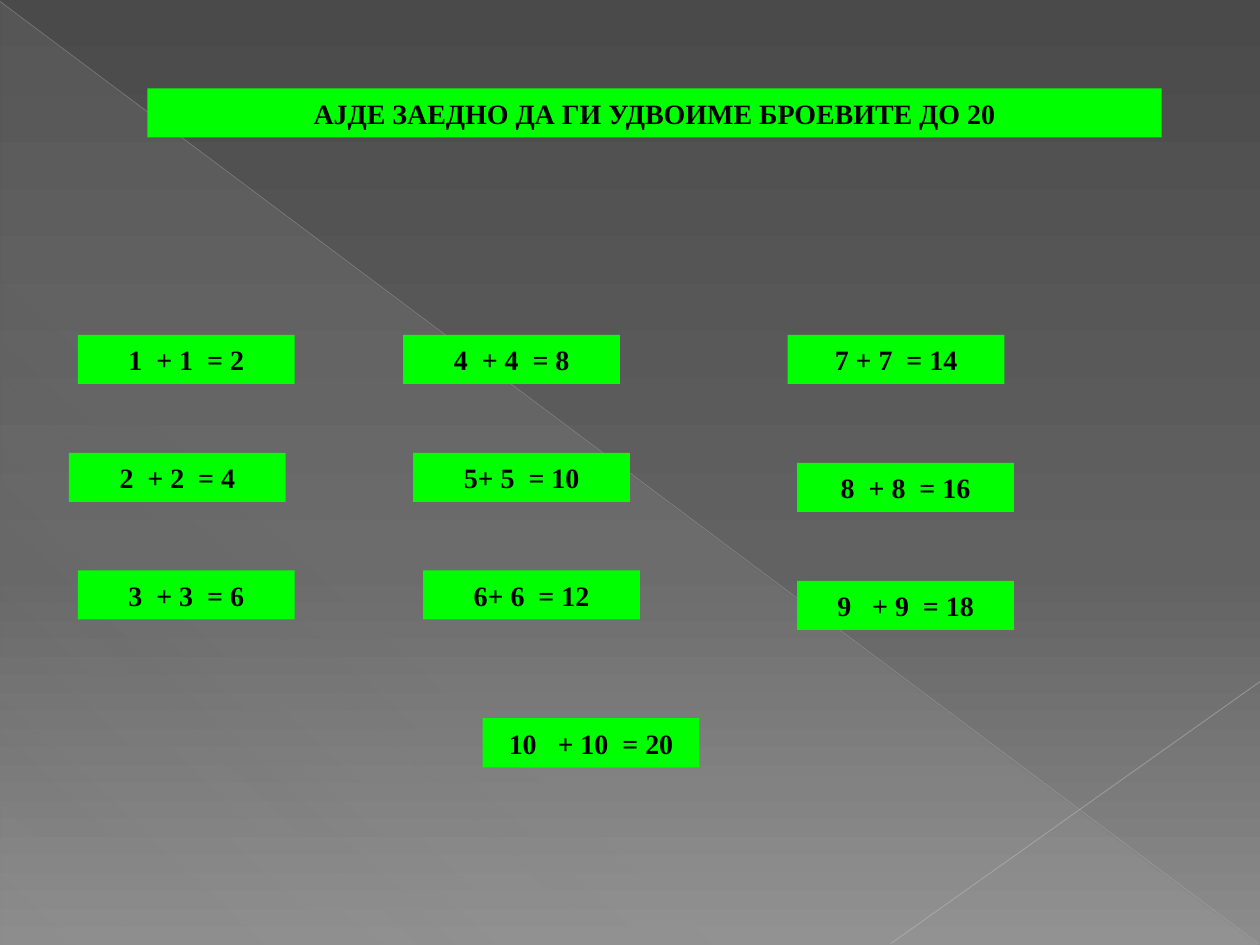
from dataclasses import dataclass

from lxml.etree import SubElement
from pptx import Presentation
from pptx.dml.color import RGBColor
from pptx.enum.shapes import MSO_CONNECTOR as CONN, MSO_SHAPE as SHAPE
from pptx.enum.text import MSO_ANCHOR as ANCHOR, PP_ALIGN as ALIGN
from pptx.oxml.ns import qn
from pptx.util import Cm, Pt

COLORS = {
    "box": "00FF00", "text": "000000", "veil": "D2D2D2",
    "diagonal": "BFBFBF", "corner": "C6C6C6",
    "bg_top": "4A4A4A", "bg_mid": "626262", "bg_bottom": "8C8C8C",
}
FONT = {"name": "Times New Roman", "size": Pt(16), "bold": True}
FRAME = {"word_wrap": True, "vertical_anchor": ANCHOR.MIDDLE,
         "margin_top": Cm(0.13), "margin_bottom": Cm(0.13)}
BOX_W, BOX_H = 4.37, 0.99


@dataclass
class Sum:
    text: str
    left: float
    top: float


@dataclass
class Line:
    start: tuple[float, float]
    end: tuple[float, float]
    color: str
    width: float
    opacity: int


SUMS = [
    Sum("1  + 1  = 2", 1.57, 6.75),
    Sum("2  + 2  = 4", 1.39, 9.13),
    Sum("3  + 3  = 6", 1.57, 11.5),
    Sum("4  + 4  = 8", 8.13, 6.75),
    Sum("5+ 5  = 10", 8.33, 9.13),
    Sum("6+ 6  = 12", 8.53, 11.5),
    Sum("7 + 7  = 14", 15.88, 6.75),
    Sum("8  + 8  = 16", 16.07, 9.33),
    Sum("9   + 9  = 18", 16.07, 11.71),
    Sum("10   + 10  = 20", 9.73, 14.48),
]
LINES = [
    Line((0, 0.03), (25.37, 19.02), "diagonal", 0.39, 35),
    Line((25.4, 13.74), (17.96, 19.02), "corner", 0.47, 45),
]


def rgb(name: str) -> RGBColor:
    return RGBColor.from_string(COLORS[name])


def add_alpha(color_element, percent: int) -> None:
    SubElement(color_element, qn("a:alpha"), val=str(percent * 1000))


def set_gradient(fill, owner, stops: list[tuple[int, str, int]], angle: int) -> None:
    """Each stop is (position %, colour name, opacity %)."""
    fill.gradient()
    grad = owner.find(".//" + qn("a:gradFill"))
    stop_list = grad.find(qn("a:gsLst"))
    for old in list(stop_list):
        stop_list.remove(old)
    for pos, name, opacity in stops:
        gs = SubElement(stop_list, qn("a:gs"), pos=str(pos * 1000))
        color = SubElement(gs, qn("a:srgbClr"), val=COLORS[name])
        if opacity < 100:
            add_alpha(color, opacity)
    grad.find(qn("a:lin")).set("ang", str(angle * 60000))


def draw_line(s, line: Line) -> None:
    cx = s.shapes.add_connector(CONN.STRAIGHT, *map(Cm, line.start + line.end))
    cx.line.color.rgb = rgb(line.color)
    cx.line.width = Pt(line.width)
    sp_pr = cx.element.spPr
    add_alpha(sp_pr.find(".//" + qn("a:srgbClr")), line.opacity)
    SubElement(sp_pr, qn("a:effectLst"))


def format_box(sp, text: str) -> None:
    sp.fill.solid()
    sp.fill.fore_color.rgb = rgb("box")
    sp.line.fill.background()
    tf = sp.text_frame
    for key, value in FRAME.items():
        setattr(tf, key, value)
    p = tf.paragraphs[0]
    p.alignment = ALIGN.CENTER
    r = p.add_run()
    r.text = text
    for key, value in FONT.items():
        setattr(r.font, key, value)
    r.font.color.rgb = rgb("text")


def draw_sum(s, item: Sum) -> None:
    sp = s.shapes.add_shape(SHAPE.RECTANGLE, Cm(item.left), Cm(item.top),
                            Cm(BOX_W), Cm(BOX_H))
    sp.shadow.inherit = False
    format_box(sp, item.text)


def main() -> None:
    prs = Presentation()
    prs.slide_width, prs.slide_height = Cm(25.4), Cm(19.05)
    s = prs.slides.add_slide(prs.slide_layouts[5])
    title = s.shapes.title

    # Background, translucent triangle and thin diagonals
    set_gradient(s.background.fill, s.element,
                 [(0, "bg_top", 100), (60, "bg_mid", 100), (100, "bg_bottom", 100)], 90)
    veil = s.shapes.add_shape(SHAPE.RIGHT_TRIANGLE, Cm(0.02), Cm(0.04),
                              Cm(25.35), Cm(19))
    veil.shadow.inherit = False
    veil.line.fill.background()
    set_gradient(veil.fill, veil.element,
                 [(0, "veil", 10), (70, "veil", 8), (100, "veil", 1)], 133)
    for line in LINES:
        draw_line(s, line)

    # Sums
    for item in SUMS:
        draw_sum(s, item)

    # Title, brought in front of the triangle
    title.left, title.top = Cm(2.97), Cm(1.78)
    title.width, title.height = Cm(20.45), Cm(BOX_H)
    format_box(title, "АЈДЕ ЗАЕДНО ДА ГИ УДВОИМЕ БРОЕВИТЕ ДО 20")
    s.shapes.element.append(title.element)

    prs.save("out.pptx")


if __name__ == "__main__":
    main()
